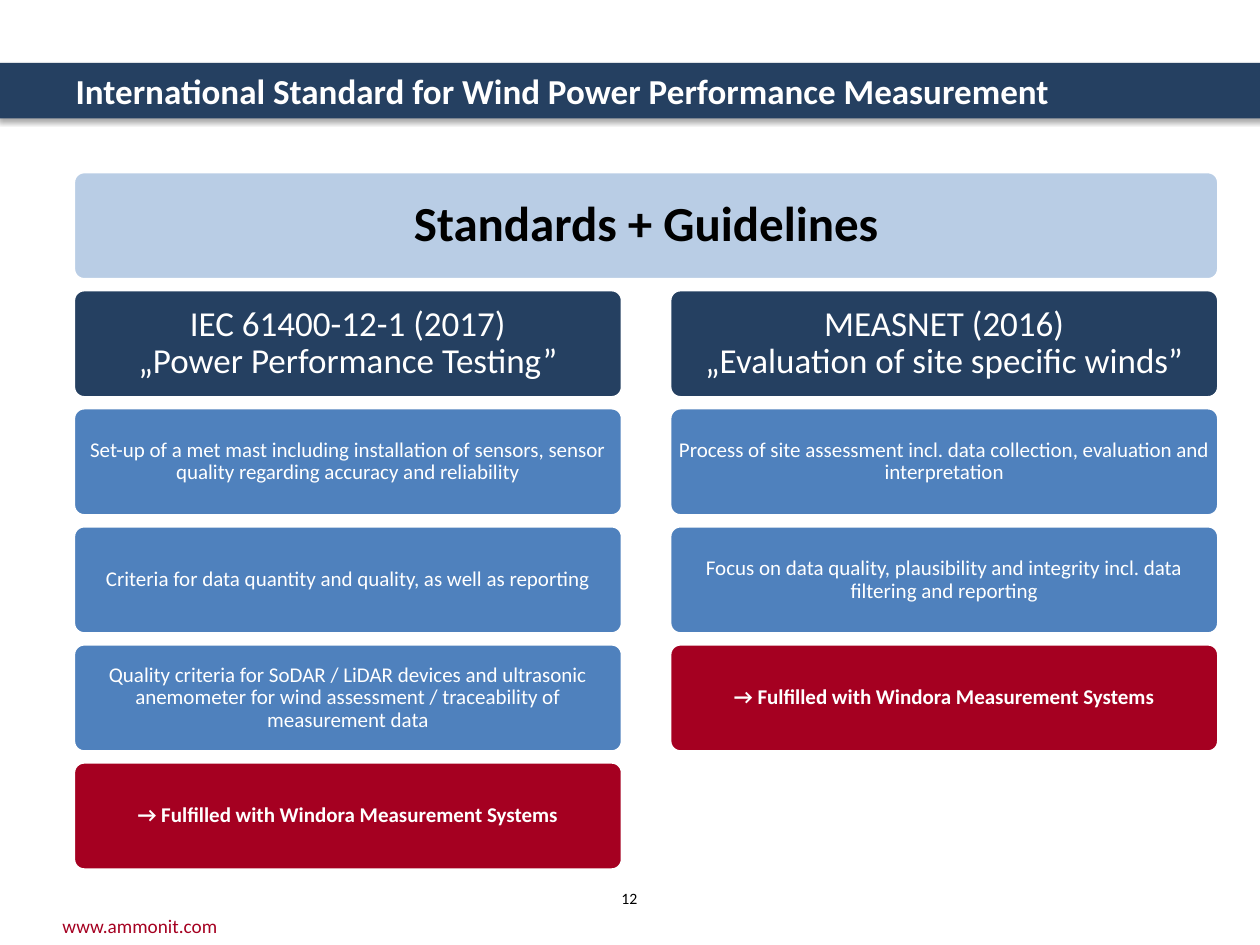
from lxml import etree
from pptx import Presentation
from pptx import util as u
from pptx.dml.color import RGBColor
from pptx.enum import shapes, text
from pptx.oxml import parse_xml
from pptx.oxml.ns import nsdecls

NAVY, BLUE, PALE, RED = "254061", "4F81BD", "B9CDE5", "A50021"
WHITE, BLACK = "FFFFFF", "000000"

ROW_HEIGHT, ROW_PITCH = 2.18, 2.38
COLUMN_GAP = 0.95

FULFILLED = "→ Fulfilled with Windora Measurement Systems"
STANDARDS = [
    (["IEC 61400-12-1 (2017)", "„Power Performance Testing”"],
     ["Set-up of a met mast including installation of sensors, sensor "
      "quality regarding accuracy and reliability",
      "Criteria for data quantity and quality, as well as reporting",
      "Quality criteria for SoDAR / LiDAR devices and ultrasonic anemometer "
      "for wind assessment / traceability of measurement data"]),
    (["MEASNET (2016)", "„Evaluation of site specific winds”"],
     ["Process of site assessment incl. data collection, evaluation and "
      "interpretation",
      "Focus on data quality, plausibility and integrity incl. data "
      "filtering and reporting"]),
]


def color(hex_string):
    return RGBColor.from_string(hex_string)


def add_lines(paragraph, lines, size, hex_color, bold=False):
    """Write the lines as runs of one paragraph, with line breaks between."""
    for index, line in enumerate(lines):
        if index:
            paragraph.add_line_break()
        run = paragraph.add_run()
        run.text = line
        run.font.name = "Calibri"
        run.font.size = u.Pt(size)
        run.font.bold = bold
        run.font.color.rgb = color(hex_color)


def set_insets(frame, horizontal, vertical):
    frame.margin_left = frame.margin_right = u.Cm(horizontal)
    frame.margin_top = frame.margin_bottom = u.Cm(vertical)


def add_card(slide, left, top, width, lines, fill, size=12, inset=0.12,
             font_color=WHITE, bold=False):
    card = slide.shapes.add_shape(
        shapes.MSO_SHAPE.ROUNDED_RECTANGLE,
        u.Cm(left), u.Cm(top), u.Cm(width), u.Cm(ROW_HEIGHT))
    card.adjustments[0] = 0.1
    card.shadow.inherit = False
    card.fill.solid()
    card.fill.fore_color.rgb = color(fill)
    card.line.color.rgb = color(WHITE)
    card.line.width = u.Pt(2)
    frame = card.text_frame
    frame.word_wrap = True
    frame.vertical_anchor = text.MSO_ANCHOR.MIDDLE
    set_insets(frame, inset, inset)
    paragraph = frame.paragraphs[0]
    paragraph.alignment = text.PP_ALIGN.CENTER
    paragraph.line_spacing = 0.9
    add_lines(paragraph, lines, size, font_color, bold)


def add_title_bar(slide, top, height):
    bar = slide.shapes.add_shape(
        shapes.MSO_SHAPE.RECTANGLE,
        u.Cm(-0.05), u.Cm(top), u.Cm(25.5), u.Cm(height))
    bar.fill.solid()
    bar.fill.fore_color.rgb = color(NAVY)
    bar.line.fill.background()
    effects = parse_xml(f"<a:effectLst {nsdecls('a')}/>")
    shadow = etree.SubElement(
        effects, effects.tag.replace("effectLst", "outerShdw"),
        blurRad=str(u.Pt(3.1)), dist=str(u.Pt(1.8)), dir="5400000",
        rotWithShape="0")
    shadow.append(parse_xml(
        f'<a:srgbClr {nsdecls("a")} val="{BLACK}"><a:alpha val="35000"/></a:srgbClr>'))
    bar._element.spPr.append(effects)

    title = slide.shapes.title
    title._element.addprevious(bar._element)
    title.left, title.top = u.Cm(1.27), u.Cm(top)
    title.width, title.height = u.Cm(23.27), u.Cm(height)
    frame = title.text_frame
    frame.auto_size = text.MSO_AUTO_SIZE.NONE
    frame.vertical_anchor = text.MSO_ANCHOR.MIDDLE
    paragraph = frame.paragraphs[0]
    paragraph.alignment = text.PP_ALIGN.LEFT
    add_lines(paragraph,
              ["International Standard for Wind Power Performance Measurement"],
              20, WHITE, bold=True)


def add_standard(slide, left, top, width, heading, items):
    """Stack a heading, its criteria and the conclusion in one column."""
    add_card(slide, left, top, width, heading, NAVY, size=20, inset=0.2)
    for item in items:
        top += ROW_PITCH
        add_card(slide, left, top, width, [item], BLUE)
    add_card(slide, left, top + ROW_PITCH, width, [FULFILLED], RED, bold=True)


def add_overview(slide, left, top, width):
    add_card(slide, left, top, width, ["Standards + Guidelines"], PALE,
             size=28, inset=0.3, font_color=BLACK, bold=True)
    column_width = (width - COLUMN_GAP) / 2
    for index, (heading, items) in enumerate(STANDARDS):
        add_standard(slide, left + index * (column_width + COLUMN_GAP),
                     top + ROW_PITCH, column_width, heading, items)


def add_footer_text(slide, left, top, width, height, words, size, hex_color,
                    alignment, wrap):
    box = slide.shapes.add_textbox(
        u.Cm(left), u.Cm(top), u.Cm(width), u.Cm(height))
    frame = box.text_frame
    frame.word_wrap = wrap
    set_insets(frame, 0.27, 0.13)
    paragraph = frame.paragraphs[0]
    paragraph.alignment = alignment
    add_lines(paragraph, [words], size, hex_color)


def add_footer(slide, left, top):
    add_footer_text(slide, left, top + 0.53, 3.71, 0.74, "www.ammonit.com",
                    11, RED, text.PP_ALIGN.LEFT, False)
    add_footer_text(slide, left + 8.74, top, 5.92, 0.51, "12",
                    9, BLACK, text.PP_ALIGN.CENTER, True)


def main():
    presentation = Presentation()
    presentation.slide_width, presentation.slide_height = u.Cm(25.4), u.Cm(19.05)
    slide = presentation.slides.add_slide(
        presentation.slide_layouts.get_by_name("Title Only"))
    add_title_bar(slide, top=1.27, height=1.12)
    add_overview(slide, left=1.48, top=3.46, width=23.09)
    add_footer(slide, left=0.99, top=17.78)
    presentation.save("out.pptx")


if __name__ == "__main__":
    main()
